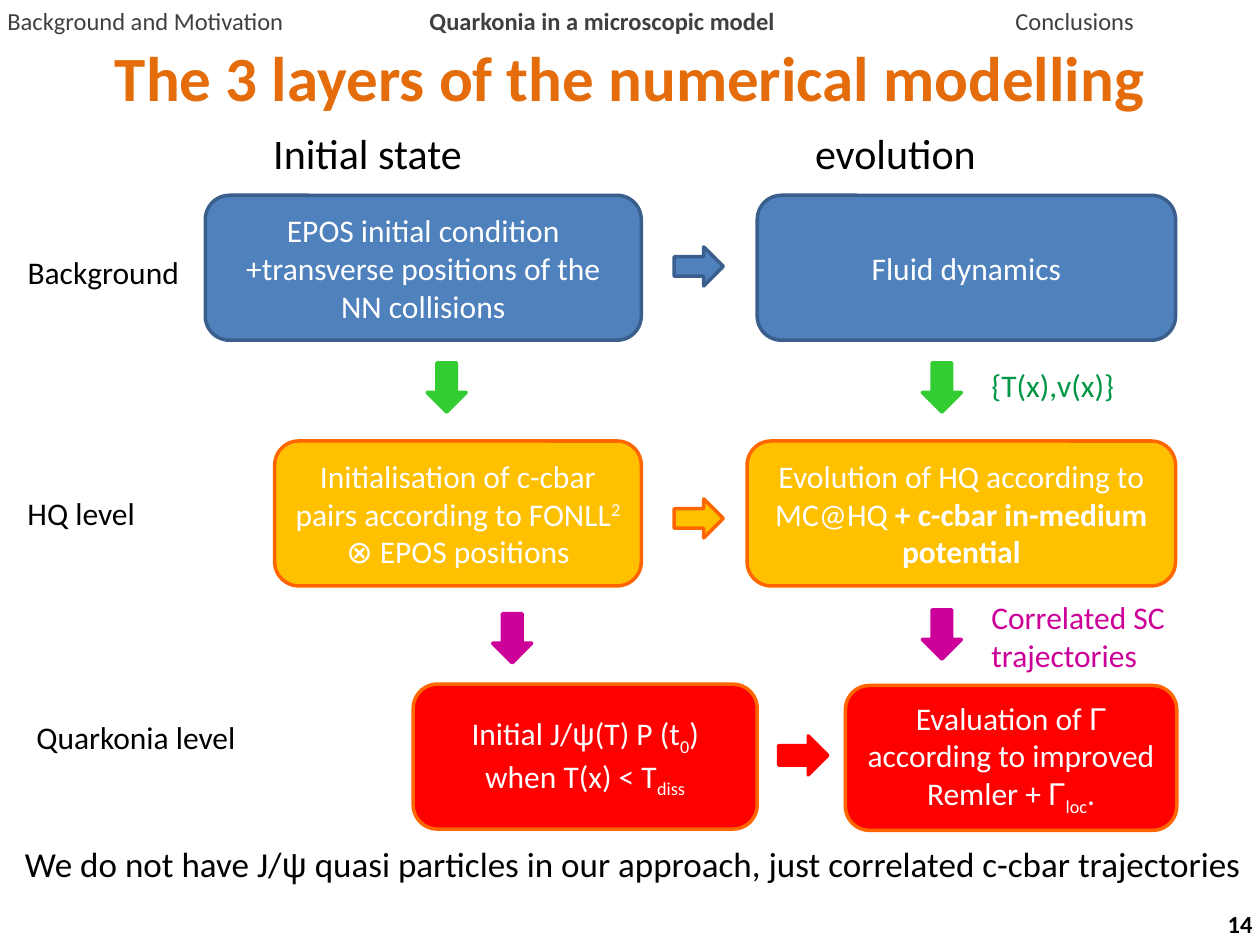
from lxml import etree
from pptx import Presentation
from pptx.dml.color import RGBColor
from pptx.enum import shapes, text
from pptx.oxml import ns
from pptx.util import Pt

PX = 9144
BLACK, WHITE, GREY = "000000", "FFFFFF", "404040"
ORANGE, GREEN, MAGENTA = "FF6600", "33CC33", "CC0099"
ARROW_SIZE = (39, 31)
BOX_HEIGHT = 115

STYLES = {
    "plain": {},
    "bold": {"bold": True},
    "greek": {"name": "Arial"},
    "sup": {"baseline": "30000"},
    "sub": {"baseline": "-25000"},
}

LEVELS = [
    {
        "label": ("Background", (12, 196, 142, 40), False),
        "fill": "4F81BD", "line": "3A5F8C", "arrow_line": "3A5F8C", "arrow": (535, 196),
        "boxes": [
            (163, 155, 346, [("EPOS initial condition +transverse positions of the NN collisions", "plain")]),
            (601, 155, 332, [("Fluid dynamics", "plain")]),
        ],
    },
    {
        "label": ("HQ level", (12, 387, 107, 40), False),
        "fill": "FFC000", "line": ORANGE, "arrow_line": ORANGE, "arrow": (535, 396),
        "boxes": [
            (218, 350, 291, [("Initialisation of c-cbar pairs according to FONLL", "plain"),
                             ("2 ", "sup"), ("⊗ EPOS positions", "plain")]),
            (593, 350, 340, [("Evolution of HQ according to MC@HQ ", "plain"),
                             ("+ c-cbar in-medium potential", "bold")]),
        ],
    },
    {
        "label": ("Quarkonia level", (19, 565, 222, 40), True),
        "fill": "FF0000", "line": ORANGE, "arrow_line": "FF0000", "arrow": (618, 584),
        "boxes": [
            (328, 543, 273, [("Initial J/", "plain"), ("ψ", "greek"), ("(T) P (t", "plain"), ("0", "sub"),
                             (") when T(x) < T", "plain"), ("diss", "sub")]),
            (671, 544, 263, [("Evaluation of ", "plain"), ("Γ ", "greek"),
                             ("according to improved Remler + ", "plain"), ("Γ", "greek"),
                             ("loc", "sub"), (".", "plain")]),
        ],
    },
]

DOWN_ARROWS = [(335, 292, GREEN), (728, 292, GREEN), (728, 488, MAGENTA), (387, 491, MAGENTA)]

CAPTIONS = [
    ([("Initial state", "plain")], (207, 96, 171, 50), 24, BLACK, False),
    ([("evolution", "plain")], (637, 96, 149, 50), 24, BLACK, False),
    ([("{T(x),v(x)}", "plain")], (777, 286, 119, 40), 18, "009644", False),
    ([("Correlated SC trajectories", "plain")], (777, 470, 197, 71), 18, MAGENTA, True),
    ([("We do not have J/", "plain"), ("ψ", "greek"),
      (" quasi particles in our approach, just correlated c-cbar trajectories", "plain")],
     (10, 664, 987, 44), 20, BLACK, False),
]

NAVIGATION = [("Background and Motivation\t", "plain"),
              ("Quarkonia in a microscopic model\t", "bold"), ("Conclusions", "plain")]
NAVIGATION_TABS = (335, 800)


def color(value):
    return RGBColor.from_string(value)


def emu(lengths):
    return [length * PX for length in lengths]


def write(shape, runs, size, ink, align, frame_format):
    for name, value in frame_format.items():
        setattr(shape.text_frame, name, value)
    paragraph = shape.text_frame.paragraphs[0]
    paragraph.alignment = align
    for content, style in runs:
        run = paragraph.add_run()
        run.text = content
        font_format = {"name": "Calibri", "size": Pt(size), "bold": False, **STYLES[style]}
        baseline = font_format.pop("baseline", None)
        for name, value in font_format.items():
            setattr(run.font, name, value)
        run.font.color.rgb = color(ink)
        if baseline:
            run.font._element.set("baseline", baseline)
    return paragraph


def add_text(parent, runs, area, size, ink, wrap=True, align=text.PP_ALIGN.LEFT, middle=False):
    box = parent.add_textbox(*emu(area))
    frame_format = {"word_wrap": wrap}
    if middle:
        frame_format["vertical_anchor"] = text.MSO_ANCHOR.MIDDLE
    else:
        frame_format["auto_size"] = text.MSO_AUTO_SIZE.SHAPE_TO_FIT_TEXT
    return write(box, runs, size, ink, align, frame_format)


def add_figure(parent, kind, area, fill, line):
    shape = parent.add_shape(kind, *emu(area))
    shape.shadow.inherit = False
    shape.fill.solid()
    shape.fill.fore_color.rgb = color(fill)
    shape.line.color.rgb = color(line)
    shape.line.width = Pt(2)
    return shape


def add_level(slide, level):
    group = slide.shapes.add_group_shape().shapes
    label, area, wrap = level["label"]
    add_text(group, [(label, "plain")], area, 18, BLACK, wrap)
    for left, top, width, runs in level["boxes"]:
        box = add_figure(group, shapes.MSO_SHAPE.ROUNDED_RECTANGLE,
                         (left, top, width, BOX_HEIGHT), level["fill"], level["line"])
        write(box, runs, 18, WHITE, text.PP_ALIGN.CENTER,
              {"word_wrap": True, "vertical_anchor": text.MSO_ANCHOR.MIDDLE})
    add_figure(group, shapes.MSO_SHAPE.RIGHT_ARROW, level["arrow"] + ARROW_SIZE,
               level["fill"], level["arrow_line"])


def add_tabs(paragraph, stops):
    tabs = etree.SubElement(paragraph._p.get_or_add_pPr(), ns.qn("a:tabLst"))
    for stop in stops:
        etree.SubElement(tabs, ns.qn("a:tab"), pos=str(stop * PX), algn="l")


def main():
    presentation = Presentation()
    presentation.slide_width, presentation.slide_height = emu((1000, 750))
    slide = presentation.slides.add_slide(presentation.slide_layouts[6])
    add_text(slide.shapes, [("14", "bold")], (771, 713, 233, 40), 14, BLACK,
             align=text.PP_ALIGN.RIGHT, middle=True)
    add_text(slide.shapes, [("The 3 layers of the numerical modelling", "bold")],
             (0, 29, 1000, 63), 36, "E46C0A", align=text.PP_ALIGN.CENTER, middle=True)
    for level in LEVELS:
        add_level(slide, level)
    for left, top, fill in DOWN_ARROWS:
        arrow = add_figure(slide.shapes, shapes.MSO_SHAPE.RIGHT_ARROW,
                           (left, top) + ARROW_SIZE, fill, fill)
        arrow.rotation = 90
    for caption in CAPTIONS:
        add_text(slide.shapes, *caption)
    navigation = add_text(slide.shapes, NAVIGATION, (-4, 0, 1008, 34), 14, GREY)
    add_tabs(navigation, NAVIGATION_TABS)
    presentation.save("out.pptx")


if __name__ == "__main__":
    main()
